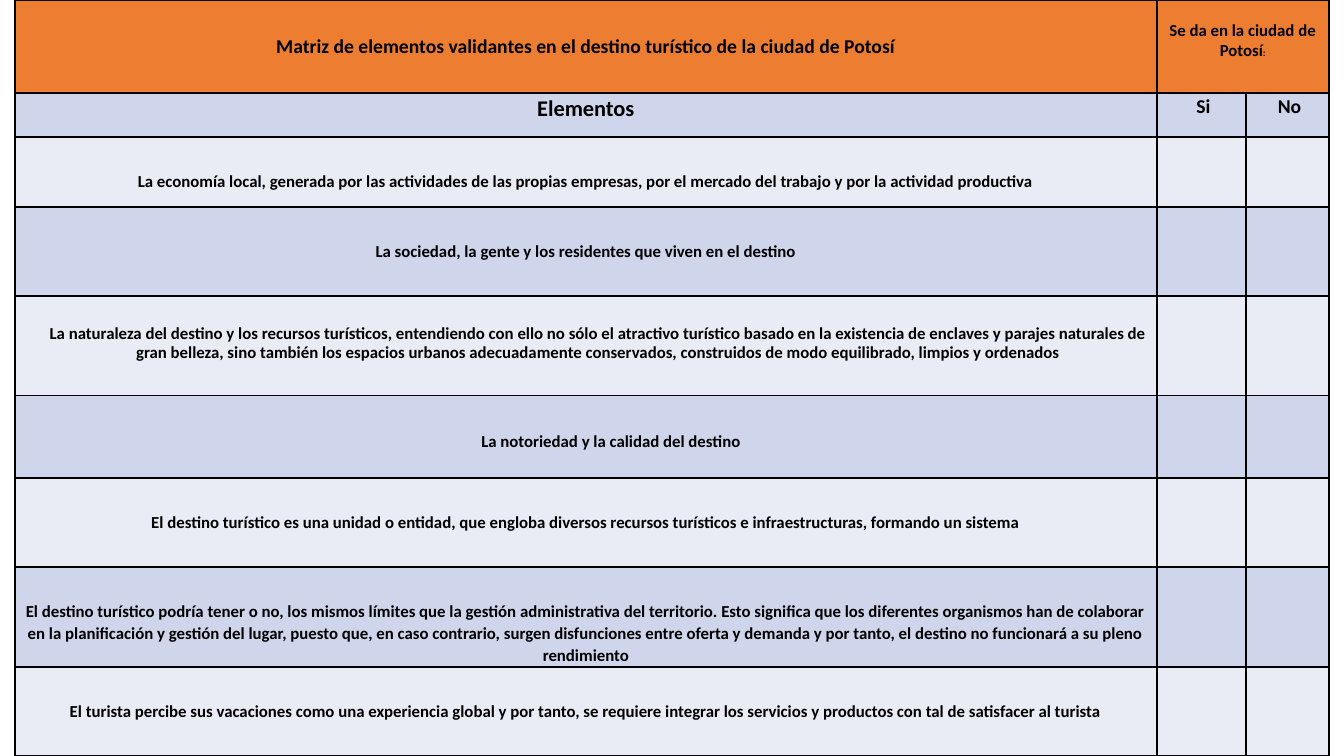
from dataclasses import dataclass

from lxml import etree
from pptx import Presentation
from pptx.dml.color import RGBColor
from pptx.enum.text import PP_ALIGN
from pptx.oxml.ns import qn
from pptx.util import Inches, Pt

CENTER = PP_ALIGN.CENTER
ORANGE = RGBColor(0xED, 0x7D, 0x31)
BLUE = RGBColor(0xCF, 0xD5, 0xEA)
PALE = RGBColor(0xE9, 0xEB, 0xF5)
BLACK = RGBColor(0, 0, 0)
FONT = "Calibri"
COLUMN_SHARES = (1133, 89, 82)
ROW_SHARES = (92, 44, 69, 88, 99, 82, 88, 99, 88)
SIDE = 0.04


@dataclass
class Label:
    """Text of a cell with its size, line spacing and offsets in inches."""
    text: str
    size: int = 12
    top: float = 0.33
    indent: float = 0
    spacing: float = 1.07


TITLE = Label("Matriz de elementos validantes en el destino turístico de la ciudad de Potosí", 14)
QUESTION = Label("Se da en la ciudad de Potosí", top=0.2, spacing=1)
HEADINGS = (
    Label("Elementos", 16, top=0),
    Label("Si", 14, top=0, indent=0.04),
    Label("No", 14, top=0, indent=0.04),
)
ELEMENTS = (
    Label("La economía local, generada por las actividades de las propias empresas, "
          "por el mercado del trabajo y por la actividad productiva"),
    Label("La sociedad, la gente y los residentes que viven en el destino"),
    Label("La naturaleza del destino y los recursos turísticos, entendiendo con ello no sólo "
          "el atractivo turístico basado en la existencia de enclaves y parajes naturales de "
          "gran belleza, sino también los espacios urbanos adecuadamente conservados, "
          "construidos de modo equilibrado, limpios y ordenados",
          top=0.29, indent=0.25, spacing=0.9),
    Label("La notoriedad y la calidad del destino", top=0.37, indent=0.5, spacing=0.9),
    Label("El destino turístico es una unidad o entidad, que engloba diversos recursos "
          "turísticos e infraestructuras, formando un sistema"),
    Label("El destino turístico podría tener o no, los mismos límites que la gestión "
          "administrativa del territorio. Esto significa que los diferentes organismos han de "
          "colaborar en la planificación y gestión del lugar, puesto que, en caso contrario, "
          "surgen disfunciones entre oferta y demanda y por tanto, el destino no funcionará a "
          "su pleno rendimiento"),
    Label("El turista percibe sus vacaciones como una experiencia global y por tanto, se "
          "requiere integrar los servicios y productos con tal de satisfacer al turista"),
)


def style_cell(cell, color):
    """Give a cell its black borders, fill and narrow margins."""
    properties = cell._tc.get_or_add_tcPr()
    for side in ("a:lnL", "a:lnR", "a:lnT", "a:lnB"):
        line = etree.SubElement(properties, qn(side), w=str(Pt(1.5)))
        fill = etree.SubElement(line, qn("a:solidFill"))
        etree.SubElement(fill, qn("a:srgbClr"), val=str(BLACK))
    cell.fill.solid()
    cell.fill.fore_color.rgb = color
    cell.margin_left = cell.margin_right = Inches(SIDE)
    cell.margin_top = cell.margin_bottom = 0


def write_label(cell, label):
    """Write a centred bold label and return its paragraph."""
    cell.margin_top = Inches(label.top)
    cell.margin_left = Inches(SIDE + label.indent)
    para = cell.text_frame.paragraphs[0]
    para.alignment = CENTER
    para.line_spacing = label.spacing
    para.font.name = FONT
    para.font.size = Pt(label.size)
    para.font.bold = True
    para.font.color.rgb = BLACK
    para.add_run().text = label.text
    return para


def add_matrix(page, left, top, width, height):
    """Place the matrix of elements in the given box."""
    frame = page.shapes.add_table(
        len(ROW_SHARES), len(COLUMN_SHARES), left, top, width, height)
    table = frame.table
    table.first_row = table.horz_banding = False
    for column, share in zip(table.columns, COLUMN_SHARES):
        column.width = int(width * share / sum(COLUMN_SHARES))
    for index, (row, share) in enumerate(zip(table.rows, ROW_SHARES)):
        row.height = int(height * share / sum(ROW_SHARES))
        color = ORANGE if index == 0 else BLUE if index % 2 else PALE
        for cell in row.cells:
            style_cell(cell, color)

    table.cell(0, 1).merge(table.cell(0, 2))
    write_label(table.cell(0, 0), TITLE)
    colon = write_label(table.cell(0, 1), QUESTION).add_run()
    colon.text = ":"
    colon.font.size = Pt(7)
    for index, heading in enumerate(HEADINGS):
        write_label(table.cell(1, index), heading)
    for index, element in enumerate(ELEMENTS, start=2):
        write_label(table.cell(index, 0), element)


def main():
    """Build the one-page deck."""
    deck = Presentation()
    deck.slide_width, deck.slide_height = Inches(13.33), Inches(7.5)
    page = deck.slides.add_slide(deck.slide_layouts[6])
    add_matrix(page, Inches(0.15), 0, Inches(13.03), deck.slide_height)
    deck.save("out.pptx")


if __name__ == "__main__":
    main()
